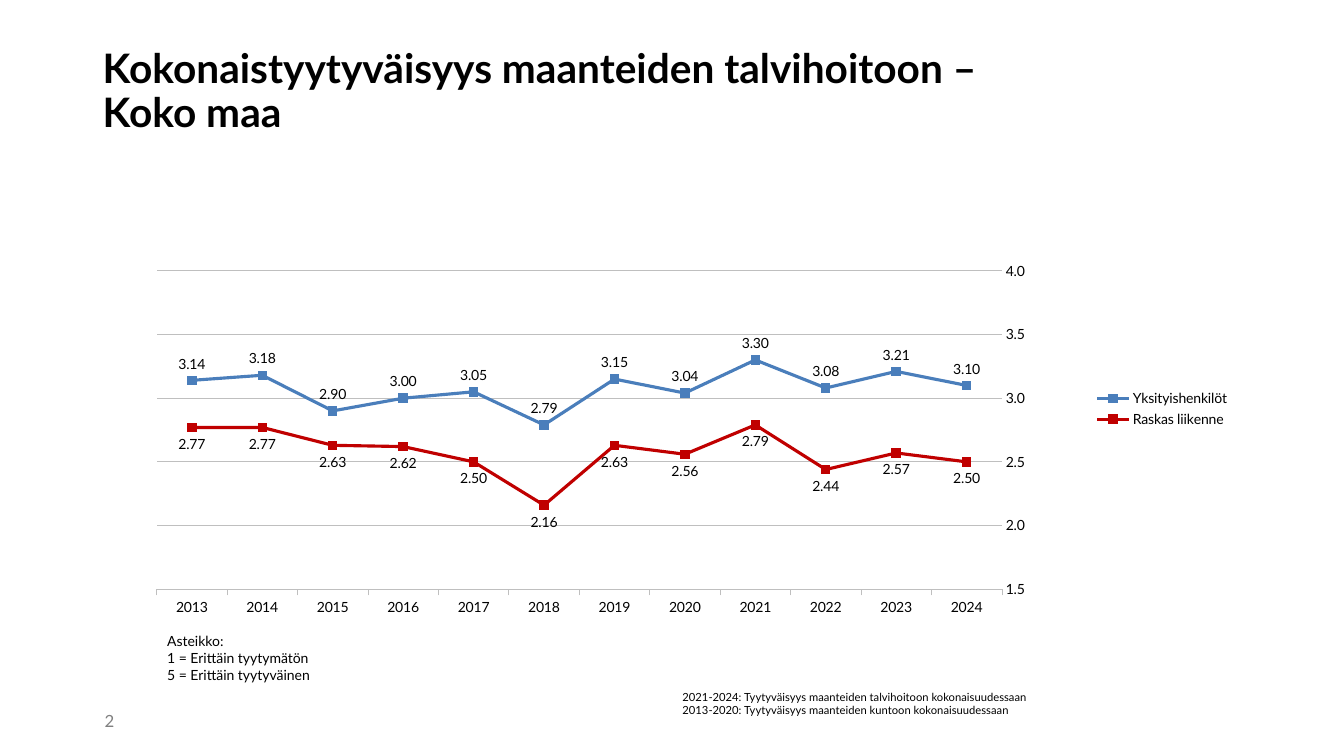
from lxml.etree import SubElement
from pptx import Presentation
from pptx.chart.data import CategoryChartData
from pptx.dml.color import RGBColor
from pptx.enum.chart import (XL_AXIS_CROSSES, XL_CHART_TYPE, XL_LABEL_POSITION,
                             XL_LEGEND_POSITION, XL_MARKER_STYLE, XL_TICK_MARK)
from pptx.enum.text import MSO_ANCHOR
from pptx.oxml.ns import qn
from pptx.util import Inches, Pt

# Content
FONT, BLACK, GRID = "Lato", "000000", "BFBFBF"
YEARS = [str(year) for year in range(2024, 2012, -1)]
SERIES = [
    {"name": "Yksityishenkilöt", "line": "4A7EBB", "marker": "4A7EBB",
     "position": XL_LABEL_POSITION.ABOVE,
     "values": (3.10, 3.21, 3.08, 3.30, 3.04, 3.15, 2.79, 3.05, 3.00, 2.90, 3.18, 3.14)},
    {"name": "Raskas liikenne", "line": "C00000", "marker": "BE4B48",
     "position": XL_LABEL_POSITION.BELOW,
     "values": (2.50, 2.57, 2.44, 2.79, 2.56, 2.63, 2.16, 2.50, 2.62, 2.63, 2.77, 2.77)},
]
CHART_BOX = (0.94, 1.89, 11.36, 4.33)
PLOT_LAYOUT = {"layoutTarget": "inner", "xMode": "edge", "yMode": "edge",
               "x": 0.054, "y": 0.184, "w": 0.738, "h": 0.73}
TEXTS = [
    {"box": (0.92, 0.19, 9.79, 1.45), "anchor": MSO_ANCHOR.MIDDLE, "spacing": 0.9,
     "size": 29, "bold": True, "color": BLACK,
     "lines": ["Kokonaistyytyväisyys maanteiden talvihoitoon – Koko maa"]},
    {"box": (0.94, 6.95, 0.61, 0.4), "anchor": MSO_ANCHOR.MIDDLE,
     "size": 12, "color": "808080", "lines": ["2"]},
    {"box": (1.56, 6.23, 1.79, 0.61), "size": 10, "color": BLACK,
     "lines": ["Asteikko:", "1 = Erittäin tyytymätön", "5 = Erittäin tyytyväinen"]},
    {"box": (6.67, 6.8, 3.89, 0.37), "size": 8, "color": BLACK,
     "lines": ["2021-2024: Tyytyväisyys maanteiden talvihoitoon kokonaisuudessaan",
               "2013-2020: Tyytyväisyys maanteiden kuntoon kokonaisuudessaan"]},
]


def set_color(color_format, color):
    color_format.rgb = RGBColor.from_string(color)


def set_font(font, size, color=BLACK, bold=False):
    for name, value in {"name": FONT, "size": Pt(size), "bold": bold}.items():
        setattr(font, name, value)
    set_color(font.color, color)


def set_line(line, color, width):
    set_color(line.color, color)
    line.width = Pt(width)


def add_text(slide, text):
    shape = slide.shapes.add_textbox(*map(Inches, text["box"]))
    frame = shape.text_frame
    frame.word_wrap = True
    frame.vertical_anchor = text.get("anchor", MSO_ANCHOR.TOP)
    frame.text = "\n".join(text["lines"])
    for paragraph in frame.paragraphs:
        paragraph.line_spacing = text.get("spacing")
        set_font(paragraph.runs[0].font, text["size"], text["color"],
                 text.get("bold", False))


def add_satisfaction_chart(slide):
    data = CategoryChartData(number_format="0.00")
    data.categories = YEARS
    for entry in SERIES:
        data.add_series(entry["name"], entry["values"])
    chart = slide.shapes.add_chart(XL_CHART_TYPE.LINE_MARKERS,
                                   *map(Inches, CHART_BOX), data).chart
    chart.has_title = False
    set_font(chart.font, 10)
    chart.has_legend = True
    chart.legend.position = XL_LEGEND_POSITION.RIGHT
    chart.legend.include_in_layout = False
    set_font(chart.legend.font, 10)

    # Axes: years run from right to left, values stay on the left side
    year_axis, value_axis = chart.category_axis, chart.value_axis
    axis_settings = {
        year_axis: {"reverse_order": True, "crosses": XL_AXIS_CROSSES.MAXIMUM,
                    "major_tick_mark": XL_TICK_MARK.OUTSIDE},
        value_axis: {"minimum_scale": 1.5, "maximum_scale": 4, "major_unit": 0.5,
                     "has_major_gridlines": True,
                     "major_tick_mark": XL_TICK_MARK.NONE},
    }
    for axis, settings in axis_settings.items():
        for name, value in settings.items():
            setattr(axis, name, value)
        set_font(axis.tick_labels.font, 10)
    value_axis.tick_labels.number_format = "0.0"
    value_axis.tick_labels.number_format_is_linked = False
    value_axis.format.line.fill.background()
    for line in (year_axis.format.line, value_axis.major_gridlines.format.line):
        set_line(line, GRID, 0.5)

    # Series
    plot = chart.plots[0]
    plot.vary_by_categories = False
    for series, entry in zip(plot.series, SERIES):
        series.smooth = False
        set_line(series.format.line, entry["line"], 2.25)
        marker = series.marker
        marker.style, marker.size = XL_MARKER_STYLE.SQUARE, 6
        marker.format.fill.solid()
        set_color(marker.format.fill.fore_color, entry["marker"])
        set_line(marker.format.line, entry["marker"], 0.75)
        labels = series.data_labels
        label_settings = {"show_value": True, "position": entry["position"],
                          "number_format": "0.00", "number_format_is_linked": False}
        for name, value in label_settings.items():
            setattr(labels, name, value)
        set_font(labels.font, 10)

    # Fixed plot area
    plot_area = chart.element.find(".//" + qn("c:plotArea"))
    layout = plot_area.find(qn("c:layout"))
    if layout is None:
        layout = SubElement(plot_area, qn("c:layout"))
        plot_area.insert(0, layout)
    manual = SubElement(layout, qn("c:manualLayout"))
    for name, value in PLOT_LAYOUT.items():
        SubElement(manual, qn("c:" + name)).set("val", str(value))


def main():
    presentation = Presentation()
    presentation.slide_width, presentation.slide_height = Inches(13.33), Inches(7.5)
    slide = presentation.slides.add_slide(presentation.slide_layouts[6])
    add_satisfaction_chart(slide)
    for text in TEXTS:
        add_text(slide, text)
    presentation.save("out.pptx")


if __name__ == "__main__":
    main()
